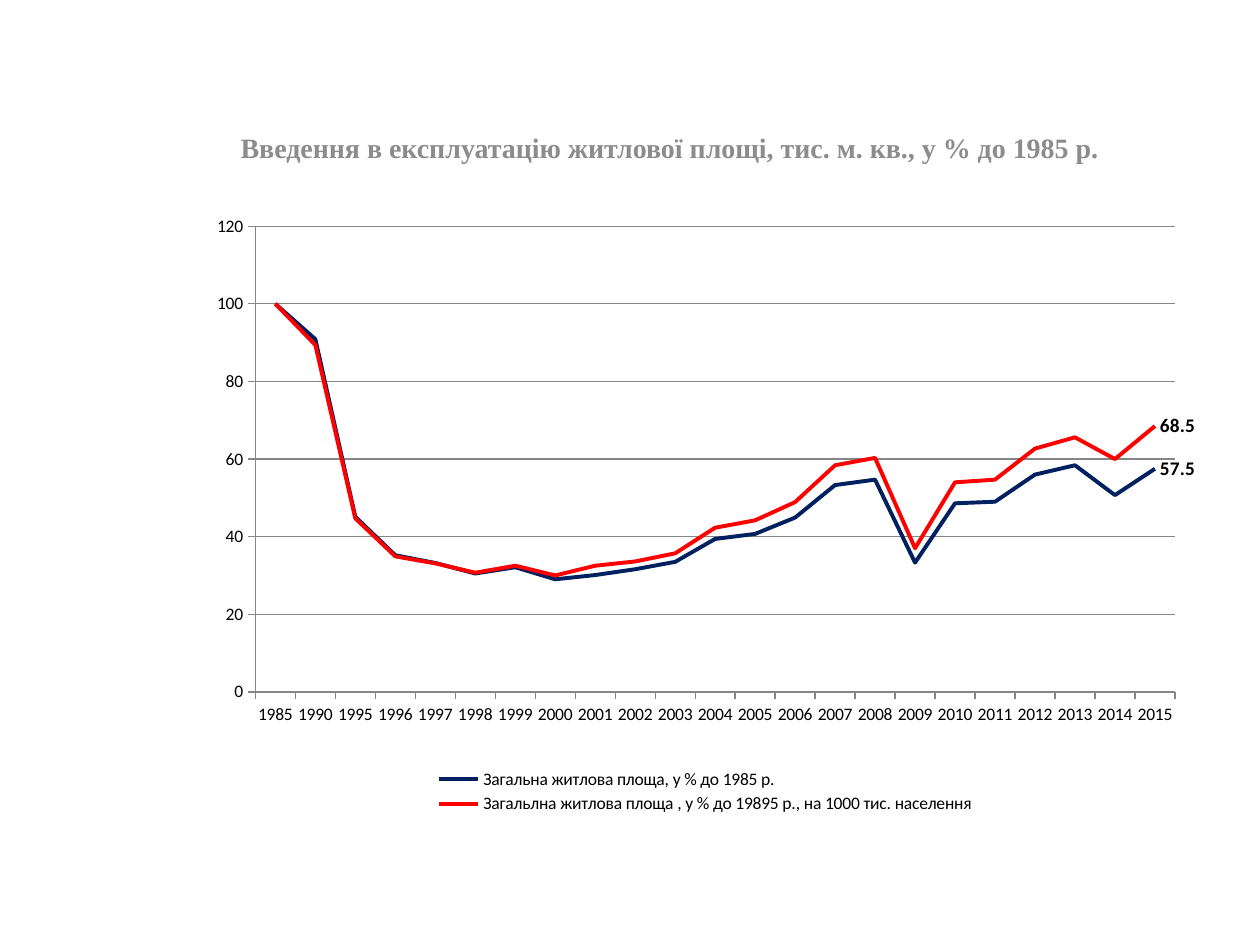
from pptx import Presentation
from pptx.chart.data import CategoryChartData
from pptx.dml.color import RGBColor
from pptx.enum.chart import XL_CHART_TYPE, XL_LABEL_POSITION, XL_LEGEND_POSITION, XL_MARKER_STYLE, XL_TICK_MARK
from pptx.enum.text import PP_ALIGN
from pptx.oxml import parse_xml
from pptx.oxml.ns import nsdecls
from pptx.util import Inches, Pt

LINE = XL_CHART_TYPE.LINE
RIGHT = XL_LABEL_POSITION.RIGHT
BOTTOM = XL_LEGEND_POSITION.BOTTOM
NO_MARKER = XL_MARKER_STYLE.NONE
OUTSIDE = XL_TICK_MARK.OUTSIDE
NO_TICK = XL_TICK_MARK.NONE
CENTER = PP_ALIGN.CENTER

BLACK = RGBColor(0x00, 0x00, 0x00)
NAVY = RGBColor(0x00, 0x20, 0x60)
RED = RGBColor(0xFF, 0x00, 0x00)
TITLE_GRAY = RGBColor(0x8C, 0x8C, 0x8C)
AXIS_GRAY = RGBColor(0x86, 0x86, 0x86)

TITLE = "Введення в експлуатацію житлової площі, тис. м. кв., у % до 1985 р."
YEARS = ["1985", "1990"] + [str(year) for year in range(1995, 2016)]
SERIES = [
    ("Загальна житлова площа, у % до 1985 р.", NAVY,
     [100, 90.9, 45.1, 35.2, 33.2, 30.5, 32.1, 29, 30.1, 31.6, 33.5, 39.4,
      40.7, 44.9, 53.3, 54.7, 33.3, 48.6, 49, 56, 58.4, 50.7, 57.5]),
    ("Загальлна житлова площа , у % до 19895 р., на 1000 тис. населення", RED,
     [100, 89.4, 44.7, 34.9, 33.1, 30.7, 32.5, 30, 32.5, 33.6, 35.7, 42.3,
      44.2, 48.9, 58.4, 60.3, 37, 54, 54.7, 62.7, 65.6, 60, 68.5]),
]


def set_font(font, size, color, bold=False, name="Calibri"):
    font.size = Pt(size)
    font.name = name
    font.bold = bold
    font.color.rgb = color


def style_line(line, color, width):
    line.color.rgb = color
    line.width = Pt(width)


def add_title(s):
    box = s.shapes.add_textbox(Inches(1.14), Inches(0.99), Inches(8.35), Inches(5.17))
    tf = box.text_frame
    tf.word_wrap = True
    p = tf.paragraphs[0]
    p.alignment = CENTER
    p.space_before = Pt(3)
    r = p.add_run()
    r.text = TITLE
    set_font(r.font, 16, TITLE_GRAY, True, "Times New Roman")


def style_axis(axis):
    axis.major_tick_mark = OUTSIDE
    axis.minor_tick_mark = NO_TICK
    style_line(axis.format.line, AXIS_GRAY, 0.75)


def style_series(series, color):
    series.smooth = False
    series.marker.style = NO_MARKER
    style_line(series.format.line, color, 2.25)
    label = series.points[len(YEARS) - 1].data_label
    set_font(label.font, 11, BLACK, True)
    label.position = RIGHT


def set_plot_layout(chart, x, y, w, h):
    plot_area = chart.plots[0]._element.getparent()
    for old in plot_area.findall(parse_xml(f"<c:layout {nsdecls('c')}/>").tag):
        plot_area.remove(old)
    plot_area.insert(0, parse_xml(
        f"<c:layout {nsdecls('c')}><c:manualLayout>"
        '<c:layoutTarget val="inner"/><c:xMode val="edge"/><c:yMode val="edge"/>'
        f'<c:x val="{x}"/><c:y val="{y}"/><c:w val="{w}"/><c:h val="{h}"/>'
        "</c:manualLayout></c:layout>"))


def add_line_chart(s):
    data = CategoryChartData()
    data.categories = YEARS
    for name, _, values in SERIES:
        data.add_series(name, values)
    chart = s.shapes.add_chart(
        LINE, Inches(1.54), Inches(1.7), Inches(8.11), Inches(4.8), data).chart
    set_font(chart.font, 10, BLACK)
    chart.has_title = False
    chart.has_legend = True
    chart.legend.position = BOTTOM
    chart.legend.include_in_layout = False
    chart.plots[0].vary_by_categories = False

    style_axis(chart.category_axis)
    style_axis(chart.value_axis)
    chart.value_axis.minimum_scale = 0
    chart.value_axis.maximum_scale = 120
    chart.value_axis.major_unit = 20
    chart.value_axis.has_major_gridlines = True
    style_line(chart.value_axis.major_gridlines.format.line, AXIS_GRAY, 0.75)

    for series, (_, color, _) in zip(chart.plots[0].series, SERIES):
        style_series(series, color)
    set_plot_layout(chart, 0.06, 0.02, 0.9, 0.77)


def main():
    prs = Presentation()
    prs.slide_width = Inches(10)
    prs.slide_height = Inches(7.5)
    s = prs.slides.add_slide(prs.slide_layouts[6])
    add_title(s)
    add_line_chart(s)
    prs.save("out.pptx")


if __name__ == "__main__":
    main()
